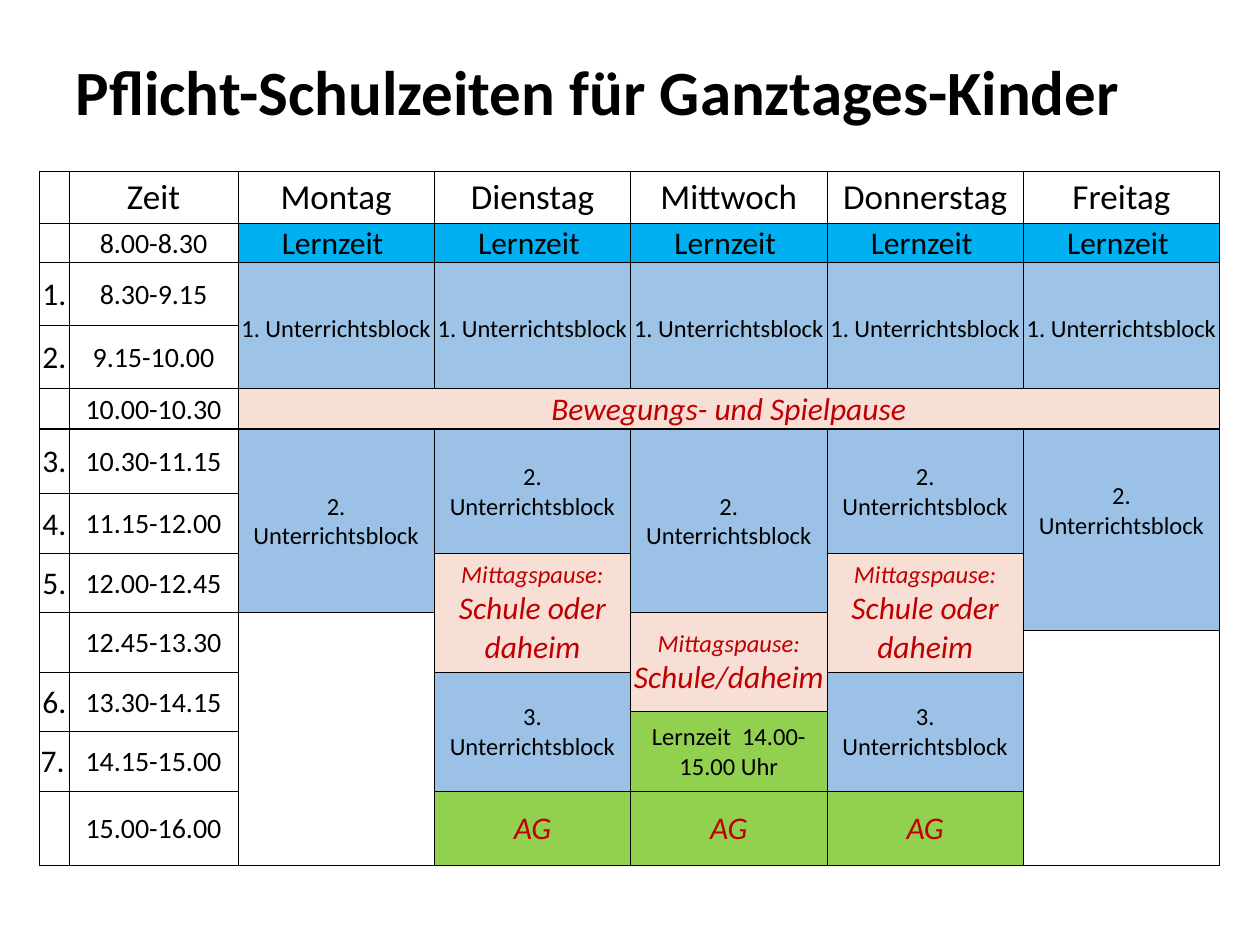
from collections import namedtuple
from dataclasses import dataclass

from lxml import etree
from pptx import Presentation
from pptx.dml.color import RGBColor
from pptx.enum import text
from pptx.oxml import ns
from pptx.util import Pt

Box = namedtuple("Box", "left top width height")
Style = namedtuple("Style", "fill color italic")


@dataclass(frozen=True)
class Theme:
    font: str = "Calibri"
    black: str = "000000"
    title: float = 36
    header: float = 20
    large: float = 18
    time: float = 16
    small: float = 14
    empty: float = 1
    thin: float = 0.5
    thick: float = 1
    plain: Style = Style("FFFFFF", "000000", False)
    study: Style = Style("00B0F0", "000000", False)
    first_block: Style = Style("9DC3E6", "000000", False)
    later_block: Style = Style("9BC2E6", "000000", False)
    pause: Style = Style("F7DFD5", "C00000", True)
    afternoon: Style = Style("92D050", "000000", False)
    club: Style = Style("92D050", "C00000", True)


THEME = Theme()
DAYS = ["Montag", "Dienstag", "Mittwoch", "Donnerstag", "Freitag"]
MONDAY, TUESDAY, WEDNESDAY, THURSDAY, FRIDAY = range(2, 7)
NUMBER_WIDTH, TIME_WIDTH = 17, 96.5
ROW_HEIGHTS = [30, 22.5, 36, 36, 23, 37, 34, 34, 10, 24, 22.5, 11.5, 34, 42.5]
THICK_RULES = {1, 5}  # rows that begin below a thick line

# first row, number of rows, lesson number, time
PERIODS = [
    (1, 1, "", "8.00-8.30"),
    (2, 1, "1.", "8.30-9.15"),
    (3, 1, "2.", "9.15-10.00"),
    (4, 1, "", "10.00-10.30"),
    (5, 1, "3.", "10.30-11.15"),
    (6, 1, "4.", "11.15-12.00"),
    (7, 1, "5.", "12.00-12.45"),
    (8, 2, "", "12.45-13.30"),
    (10, 2, "6.", "13.30-14.15"),
    (12, 1, "7.", "14.15-15.00"),
    (13, 1, "", "15.00-16.00"),
]


def put_text(frame, lines, style, alignment=text.PP_ALIGN.CENTER, bold=False):
    """Write paragraphs; each line is a list of (text, size) runs."""
    for index, runs in enumerate(lines):
        paragraph = frame.paragraphs[0] if index == 0 else frame.add_paragraph()
        paragraph.alignment = alignment
        for words, size in runs:
            run = paragraph.add_run()
            run.text = words
            formats = {"name": THEME.font, "size": Pt(size), "bold": bold,
                       "italic": style.italic}
            for name, value in formats.items():
                setattr(run.font, name, value)
            run.font.color.rgb = RGBColor.from_string(style.color)


def add_title(slide, box, words):
    frame = slide.shapes.add_textbox(*map(Pt, box)).text_frame
    frame.word_wrap = True
    frame.vertical_anchor = text.MSO_ANCHOR.MIDDLE
    put_text(frame, [[(words, THEME.title)]], THEME.plain,
             text.PP_ALIGN.LEFT, bold=True)
    frame.paragraphs[0].line_spacing = 0.9


def set_borders(cell, widths):
    properties = cell._tc.get_or_add_tcPr()
    for side in "LRTB":
        line = etree.SubElement(properties, ns.qn(f"a:ln{side}"),
                                w=str(Pt(widths.get(side, THEME.thin))))
        fill = etree.SubElement(line, ns.qn("a:solidFill"))
        etree.SubElement(fill, ns.qn("a:srgbClr"), val=THEME.black)


def prepare_cell(cell, row):
    """Give a cell its insets, lines, white fill and a tiny empty text size."""
    formats = {"margin_left": Pt(0.75), "margin_right": Pt(0.75),
               "margin_top": Pt(0.75), "margin_bottom": 0,
               "vertical_anchor": text.MSO_ANCHOR.MIDDLE}
    for name, value in formats.items():
        setattr(cell, name, value)
    set_borders(cell, {
        "T": THEME.thick if row in THICK_RULES else THEME.thin,
        "B": THEME.thick if row + 1 in THICK_RULES else THEME.thin,
    })
    fill_cell(cell, THEME.plain)
    etree.SubElement(cell.text_frame.paragraphs[0]._p, ns.qn("a:endParaRPr"),
                     sz=str(THEME.empty * 100))


def fill_cell(cell, style):
    cell.fill.solid()
    cell.fill.fore_color.rgb = RGBColor.from_string(style.fill)


def put_entry(table, row, column, lines, style=THEME.plain, rows=1, columns=1,
              alignment=text.PP_ALIGN.CENTER):
    cell = table.cell(row, column)
    if rows * columns > 1:
        cell.merge(table.cell(row + rows - 1, column + columns - 1))
    fill_cell(cell, style)
    put_text(cell.text_frame, lines, style, alignment)
    return cell


def put_periods(table):
    put_entry(table, 0, 1, [[("Zeit", THEME.header)]])
    for row, rows, number, time in PERIODS:
        side = text.PP_ALIGN.LEFT if number == "7." else text.PP_ALIGN.CENTER
        lines = [[(number, THEME.large)]] if number else []
        put_entry(table, row, 0, lines, rows=rows, alignment=side)
        put_entry(table, row, 1, [[(time, THEME.time)]], rows=rows)


def put_mornings(table):
    for column, day in enumerate(DAYS, MONDAY):
        put_entry(table, 0, column, [[(day, THEME.header)]])
        put_entry(table, 1, column, [[("Lernzeit ", THEME.large)]], THEME.study)
        put_entry(table, 2, column,
                  [[("1. Unterrichtsblock", THEME.small), (" ", THEME.large)]],
                  THEME.first_block, rows=2)
    put_entry(table, 4, MONDAY, [[("Bewegungs- und Spielpause", THEME.large)]],
              THEME.pause, columns=len(DAYS))


def put_block(table, row, column, rows, number):
    lines = [[(number, THEME.small)], [("Unterrichtsblock", THEME.small)]]
    return put_entry(table, row, column, lines, THEME.later_block, rows)


def put_lunch(table, row, column, place):
    lines = [[("Mittagspause:", THEME.small)], [(place, THEME.large)]]
    put_entry(table, row, column, lines, THEME.pause, rows=3)


def put_afternoons(table):
    for column, rows in zip(range(MONDAY, FRIDAY + 1), (3, 2, 3, 2, 4)):
        block = put_block(table, 5, column, rows, "2.")
    block.margin_bottom = Pt(22)  # Friday's text sits above the middle
    for column in (TUESDAY, THURSDAY):
        put_lunch(table, 7, column, "Schule oder daheim")
        put_block(table, 10, column, 3, "3.")
    put_lunch(table, 8, WEDNESDAY, "Schule/daheim")
    put_entry(table, 11, WEDNESDAY,
              [[("Lernzeit  14.00- 15.00 Uhr", THEME.small)]],
              THEME.afternoon, rows=2)
    for column in (TUESDAY, WEDNESDAY, THURSDAY):
        put_entry(table, 13, column, [[("AG", THEME.large)]], THEME.club)
    put_entry(table, 8, MONDAY, [], rows=6)
    put_entry(table, 9, FRIDAY, [], rows=5)


def add_timetable(slide, box):
    table = slide.shapes.add_table(len(ROW_HEIGHTS), len(DAYS) + 2,
                                   *map(Pt, box)).table
    table.first_row = table.horz_banding = False
    day_width = (box.width - NUMBER_WIDTH - TIME_WIDTH) / len(DAYS)
    widths = [NUMBER_WIDTH, TIME_WIDTH] + [day_width] * len(DAYS)
    for column, width in zip(table.columns, widths):
        column.width = Pt(width)
    for index, (row, height) in enumerate(zip(table.rows, ROW_HEIGHTS)):
        row.height = Pt(height)
        for cell in row.cells:
            prepare_cell(cell, index)
    put_periods(table)
    put_mornings(table)
    put_afternoons(table)


def main():
    presentation = Presentation()
    presentation.slide_width, presentation.slide_height = Pt(720), Pt(540)
    slide = presentation.slides.add_slide(presentation.slide_layouts[6])
    add_title(slide, Box(36, 9.5, 648, 90),
              "Pflicht-Schulzeiten für Ganztages-Kinder")
    add_timetable(slide, Box(22.5, 97.75, 674.5, sum(ROW_HEIGHTS)))
    presentation.save("out.pptx")


if __name__ == "__main__":
    main()
